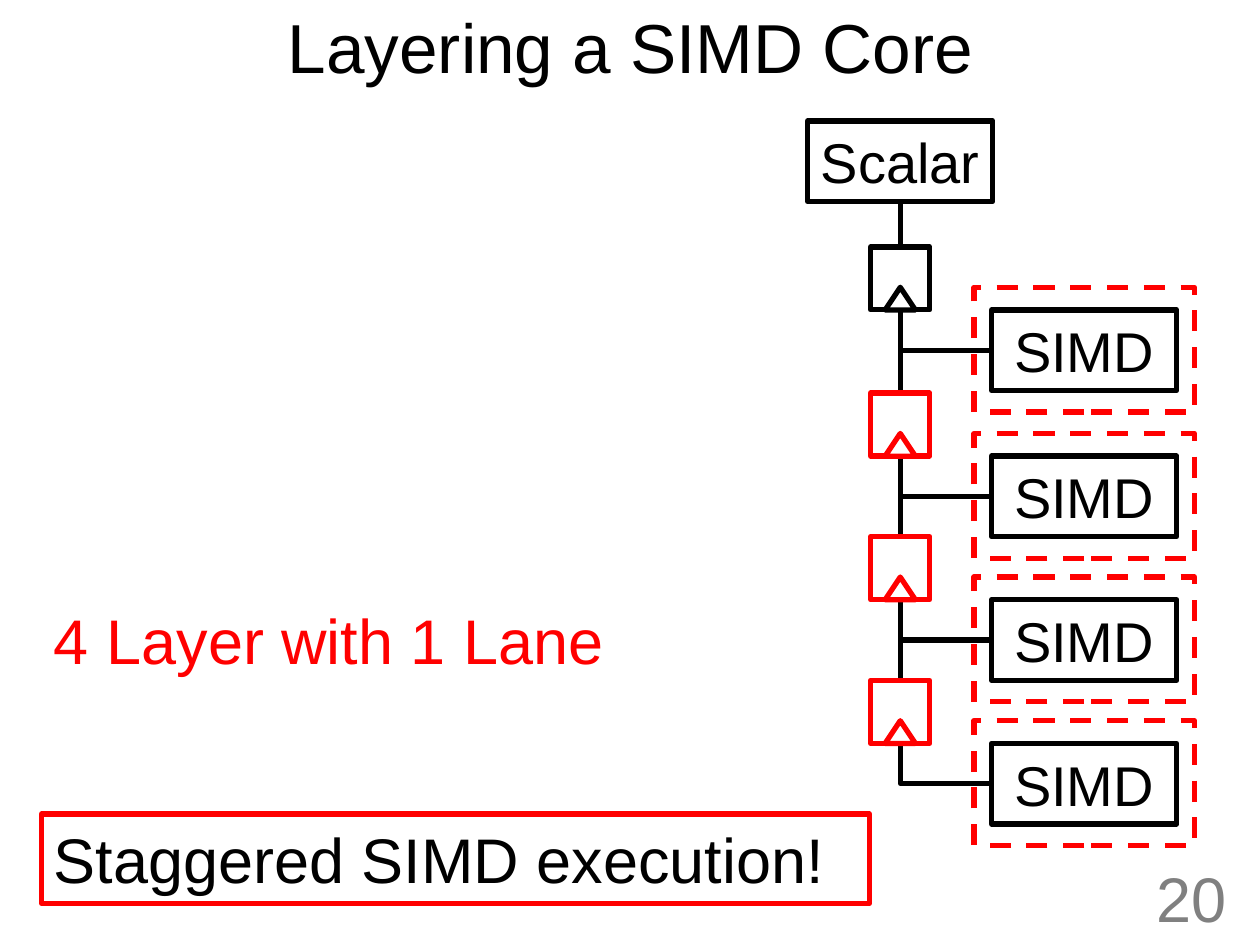
import lxml.etree
import pptx
import pptx.dml.color
import pptx.enum.dml
import pptx.enum.shapes
import pptx.enum.text
import pptx.oxml.ns
import pptx.util

Inches = pptx.util.Inches
SHAPES = pptx.enum.shapes.MSO_SHAPE
CONNECTORS = pptx.enum.shapes.MSO_CONNECTOR
ALIGN = pptx.enum.text.PP_ALIGN
MIDDLE = pptx.enum.text.MSO_ANCHOR.MIDDLE
BLACK, RED, GRAY, WHITE = "000000", "FF0000", "808080", "FFFFFF"

BOX_WIDTH, BOX_HEIGHT = 1.47, 0.64
SCALAR_LEFT, SCALAR_TOP = 6.41, 0.96
SIMD_LEFT = 7.87
SIMD_TOPS = [2.46, 3.62, 4.76, 5.9]
REGISTER_WIDTH, REGISTER_HEIGHT = 0.47, 0.5
CLOCK_WIDTH, CLOCK_HEIGHT = 0.24, 0.18
SPINE_X = SCALAR_LEFT + BOX_WIDTH / 2

presentation = pptx.Presentation()
presentation.slide_width = Inches(10)
presentation.slide_height = Inches(7.5)
slide = presentation.slides.add_slide(presentation.slide_layouts[6])


def add_item(left, top, width, height, kind=None, line=None, fill=None,
             text="", size=32, color=BLACK, align=ALIGN.CENTER):
    """Add a preset shape, or a text box when kind is None."""
    position = [Inches(value) for value in (left, top, width, height)]
    if kind is None:
        shape = slide.shapes.add_textbox(*position)
    else:
        shape = slide.shapes.add_shape(kind, *position)
        shape.shadow.inherit = False
        shape.line.color.rgb = pptx.dml.color.RGBColor.from_string(line)
        shape.line.width = pptx.util.Pt(3)
        if fill:
            shape.fill.solid()
            shape.fill.fore_color.rgb = pptx.dml.color.RGBColor.from_string(fill)
        else:
            shape.fill.background()
    if text:
        shape.text_frame.word_wrap = True
        shape.text_frame.vertical_anchor = MIDDLE
        paragraph = shape.text_frame.paragraphs[0]
        paragraph.text = text
        paragraph.alignment = align
        paragraph.font.name = "Arial"
        paragraph.font.size = pptx.util.Pt(size)
        paragraph.font.color.rgb = pptx.dml.color.RGBColor.from_string(color)
    return shape


def add_wire(kind, start_x, start_y, end_x, end_y):
    wire = slide.shapes.add_connector(
        kind, Inches(start_x), Inches(start_y), Inches(end_x), Inches(end_y))
    wire.line.color.rgb = pptx.dml.color.RGBColor.from_string(BLACK)
    wire.line.width = pptx.util.Pt(3)
    lxml.etree.SubElement(wire.element.spPr, pptx.oxml.ns.qn("a:effectLst"))
    return wire


add_item(0.17, 0.01, 9.67, 0.7, text="Layering a SIMD Core", size=39.6)
add_item(0.33, 4.72, 5.58, 0.71, text="4 Layer with 1 Lane", size=36,
         color=RED, align=ALIGN.LEFT)

# Scalar and SIMD boxes
scalar_box = add_item(SCALAR_LEFT, SCALAR_TOP, BOX_WIDTH, BOX_HEIGHT,
                      SHAPES.RECTANGLE, BLACK, text="Scalar")
simd_boxes = [add_item(SIMD_LEFT, top, BOX_WIDTH, BOX_HEIGHT,
                       SHAPES.RECTANGLE, BLACK, text="SIMD")
              for top in SIMD_TOPS]

# Spine: one right-angle bend from the scalar box down to the last SIMD box
spine_top = SCALAR_TOP + BOX_HEIGHT
spine_bottom = SIMD_TOPS[-1] + BOX_HEIGHT / 2
spine = add_wire(CONNECTORS.ELBOW, SPINE_X, spine_top, SIMD_LEFT, spine_bottom)
spine.begin_connect(scalar_box, 2)
spine.end_connect(simd_boxes[-1], 1)
drop, reach = spine_bottom - spine_top, SIMD_LEFT - SPINE_X
spine.left = Inches((SPINE_X + SIMD_LEFT - drop) / 2)
spine.top = Inches((spine_top + spine_bottom - reach) / 2)
spine.width, spine.height = Inches(drop), Inches(reach)
spine_properties = spine.element.spPr
spine_properties.find(pptx.oxml.ns.qn("a:prstGeom")).set("prst", "bentConnector2")
spine_frame = spine_properties.find(pptx.oxml.ns.qn("a:xfrm"))
spine_frame.set("rot", str(270 * 60000))
spine_frame.set("flipH", "1")

# Taps from the spine to the other SIMD boxes
for simd_box, top in zip(simd_boxes[:-1], SIMD_TOPS):
    middle = top + BOX_HEIGHT / 2
    tap = add_wire(CONNECTORS.STRAIGHT, SIMD_LEFT, middle, SPINE_X, middle)
    tap.begin_connect(simd_box, 1)

# Pipeline registers, each ending where a SIMD box starts
for index, simd_top in enumerate(SIMD_TOPS):
    color = RED if index else BLACK
    add_item(SPINE_X - REGISTER_WIDTH / 2, simd_top - REGISTER_HEIGHT,
             REGISTER_WIDTH, REGISTER_HEIGHT, SHAPES.RECTANGLE, color, WHITE)
    add_item(SPINE_X - CLOCK_WIDTH / 2, simd_top - CLOCK_HEIGHT,
             CLOCK_WIDTH, CLOCK_HEIGHT, SHAPES.ISOSCELES_TRIANGLE, color, WHITE)

add_item(0.33, 6.46, 6.57, 0.71, SHAPES.RECTANGLE, RED,
         text="Staggered SIMD execution!", size=36, align=ALIGN.LEFT)

# Dashed layer outlines
for simd_top in SIMD_TOPS:
    layer = add_item(SIMD_LEFT - 0.14, simd_top - 0.18, 1.75, 0.99,
                     SHAPES.RECTANGLE, RED)
    layer.line.dash_style = pptx.enum.dml.MSO_LINE.DASH

add_item(7.5, 6.92, 2.33, 0.4, text="20", size=36, color=GRAY, align=ALIGN.RIGHT)

presentation.save("out.pptx")
